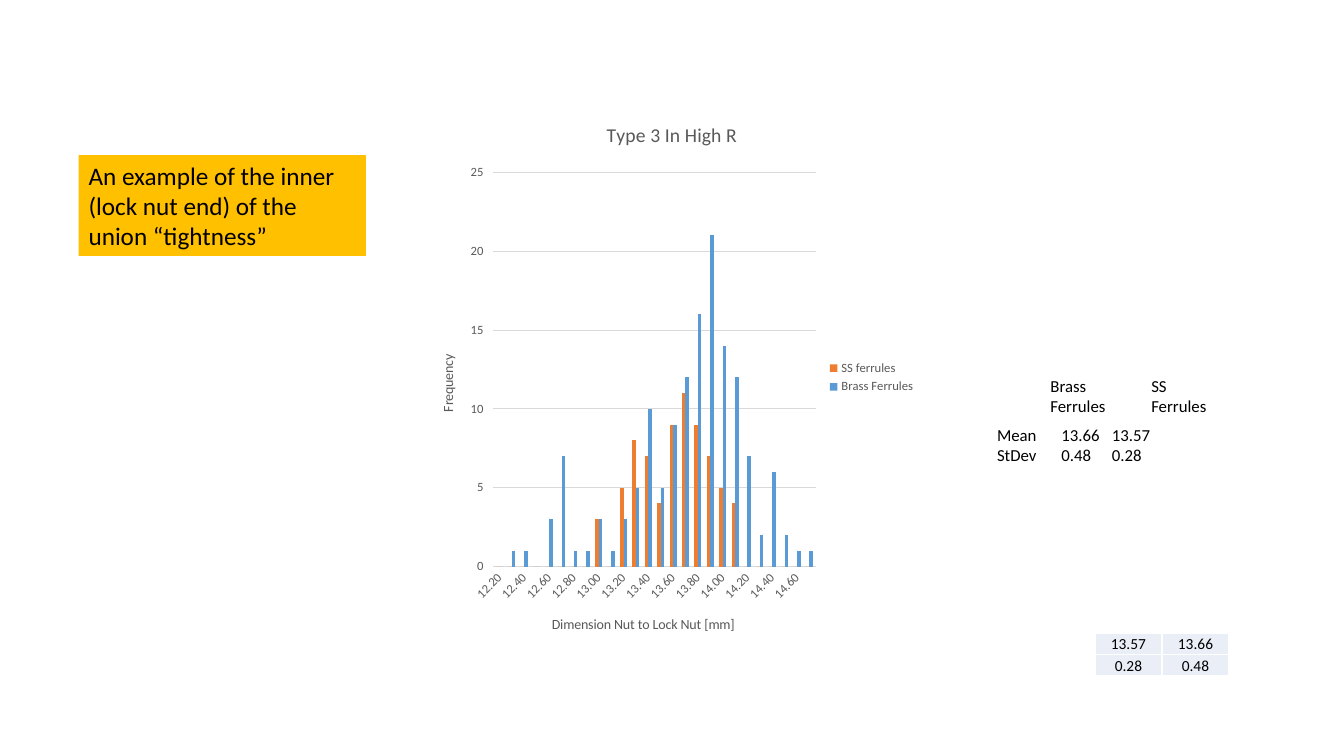
"""Build the slide on inner union tightness: ferrule histogram, callout and statistics."""
from lxml import etree
from pptx import Presentation
from pptx.chart.data import CategoryChartData
from pptx.dml.color import RGBColor
from pptx.enum.chart import XL_CHART_TYPE, XL_LEGEND_POSITION, XL_TICK_MARK
from pptx.enum.shapes import MSO_SHAPE
from pptx.enum.text import MSO_ANCHOR, MSO_AUTO_SIZE, PP_ALIGN
from pptx.oxml.ns import qn
from pptx.util import Inches, Pt

COLUMNS = XL_CHART_TYPE.COLUMN_CLUSTERED
LEGEND_RIGHT = XL_LEGEND_POSITION.RIGHT
NO_TICKS, TICKS_OUT = XL_TICK_MARK.NONE, XL_TICK_MARK.OUTSIDE
RECTANGLE = MSO_SHAPE.RECTANGLE
TOP, BOTTOM = MSO_ANCHOR.TOP, MSO_ANCHOR.BOTTOM
LEFT, CENTER = PP_ALIGN.LEFT, PP_ALIGN.CENTER
GROW = MSO_AUTO_SIZE.SHAPE_TO_FIT_TEXT
FONT = "Calibri"
COLORS = {
    name: RGBColor.from_string(value)
    for name, value in {
        "text": "000000", "chart text": "595959", "grid": "D9D9D9",
        "callout": "FFC000", "cell": "EAEFF7",
        "SS ferrules": "ED7D31", "Brass Ferrules": "5B9BD5",
    }.items()
}


def style_font(font, size, color="chart text"):
    """Set typeface, size and colour of a regular-weight font."""
    font.name, font.size, font.bold = FONT, Pt(size), False
    font.color.rgb = COLORS[color]


def write(frame, text, size=12, color="text", align=LEFT, anchor=TOP):
    """Fill a text frame, one paragraph for each line of text."""
    frame.text = text
    frame.word_wrap = True
    frame.vertical_anchor = anchor
    for paragraph in frame.paragraphs:
        paragraph.alignment = align
        for run in paragraph.runs:
            style_font(run.font, size, color)


presentation = Presentation()
presentation.slide_width, presentation.slide_height = Inches(13.33), Inches(7.5)
slide = presentation.slides.add_slide(presentation.slide_layouts[6])

frequencies = {
    "SS ferrules": [0, 0, 0, 0, 0, 0, 0, 0, 3, 0, 5, 8, 7,
                    4, 9, 11, 9, 7, 5, 4, 0, 0, 0, 0, 0, 0],
    "Brass Ferrules": [0, 1, 1, 0, 3, 7, 1, 1, 3, 1, 3, 5, 10,
                       5, 9, 12, 16, 21, 14, 12, 7, 2, 6, 2, 1, 1],
}
chart_data = CategoryChartData(number_format="0")
chart_data.categories = [tenths / 10 for tenths in range(122, 148)]
chart_data.categories.number_format = "0.00"
for name, values in frequencies.items():
    chart_data.add_series(name, values)
chart = slide.shapes.add_chart(
    COLUMNS, Inches(4.15), Inches(1.01), Inches(5.03), Inches(5.47), chart_data
).chart
style_font(chart.font, 10)
write(chart.chart_title.text_frame, "Type 3 In High R", size=14, color="chart text", align=CENTER)
chart.chart_title.include_in_layout = False
chart.has_legend = True
chart.legend.position = LEGEND_RIGHT
chart.legend.include_in_layout = False
style_font(chart.legend.font, 9)

plot = chart.plots[0]
plot.gap_width = 150
plot.vary_by_categories = False
for series in plot.series:
    series.format.fill.solid()
    series.format.fill.fore_color.rgb = COLORS[series.name]
    series.invert_if_negative = False

category_axis, value_axis = chart.category_axis, chart.value_axis
for axis, title, ticks in (
    (category_axis, "Dimension Nut to Lock Nut [mm]", NO_TICKS),
    (value_axis, "Frequency", TICKS_OUT),
):
    write(axis.axis_title.text_frame, title, size=10, color="chart text", align=CENTER)
    style_font(axis.tick_labels.font, 9)
    axis.major_tick_mark, axis.minor_tick_mark = ticks, NO_TICKS
category_axis.tick_labels.number_format = "0.00"
category_axis.tick_labels.number_format_is_linked = False
category_axis._element.find(qn("c:txPr")).find(qn("a:bodyPr")).set("rot", "-2700000")
value_axis.axis_title.text_frame._txBody.find(qn("a:bodyPr")).set("rot", "-5400000")
value_axis.minimum_scale, value_axis.maximum_scale, value_axis.major_unit = 0, 25, 5
value_axis.format.line.fill.background()
for line in (category_axis.format.line, value_axis.major_gridlines.format.line):
    line.color.rgb = COLORS["grid"]
    line.width = Pt(0.75)

callout = slide.shapes.add_shape(RECTANGLE, Inches(0.78), Inches(1.54), Inches(2.85), Inches(1))
callout.shadow.inherit = False
callout.fill.solid()
callout.fill.fore_color.rgb = COLORS["callout"]
callout.line.fill.background()
write(callout.text_frame, "An example of the inner (lock nut end) of the union “tightness”", size=18)
callout.text_frame.auto_size = GROW

statistics = [["13.57", "13.66"], ["0.28", "0.48"]]
table = slide.shapes.add_table(
    2, 2, Inches(10.86), Inches(6.28), Inches(1.33), Inches(0.42)
).table
table.first_row = table.horz_banding = False
for table_row, values in zip(table.rows, statistics):
    table_row.height = Inches(0.21)
    for cell, value in zip(table_row.cells, values):
        cell.margin_left = cell.margin_right = cell.margin_top = Inches(0.01)
        cell.margin_bottom = 0
        write(cell.text_frame, value, size=11, align=CENTER)
        cell.vertical_anchor = BOTTOM
        properties = cell._tc.get_or_add_tcPr()
        for side in ("a:lnL", "a:lnR", "a:lnT", "a:lnB"):
            border = etree.SubElement(properties, qn(side), w=str(Pt(1)))
            border_fill = etree.SubElement(border, qn("a:solidFill"))
            etree.SubElement(border_fill, qn("a:srgbClr"), val="FFFFFF")
        cell.fill.solid()
        cell.fill.fore_color.rgb = COLORS["cell"]

header_top, values_top = 3.68, 4.16
for left, top, width, text in (
    (10.32, header_top, 0.77, "Brass Ferrules"),
    (11.32, header_top, 0.81, "SS Ferrules"),
    (9.79, values_top, 0.81, "Mean\nStDev"),
    (10.43, values_top, 1.8, "13.66\t13.57\n0.48\t0.28"),
):
    label = slide.shapes.add_textbox(Inches(left), Inches(top), Inches(width), Inches(0.5))
    write(label.text_frame, text)
    label.text_frame.auto_size = GROW

presentation.save("out.pptx")
